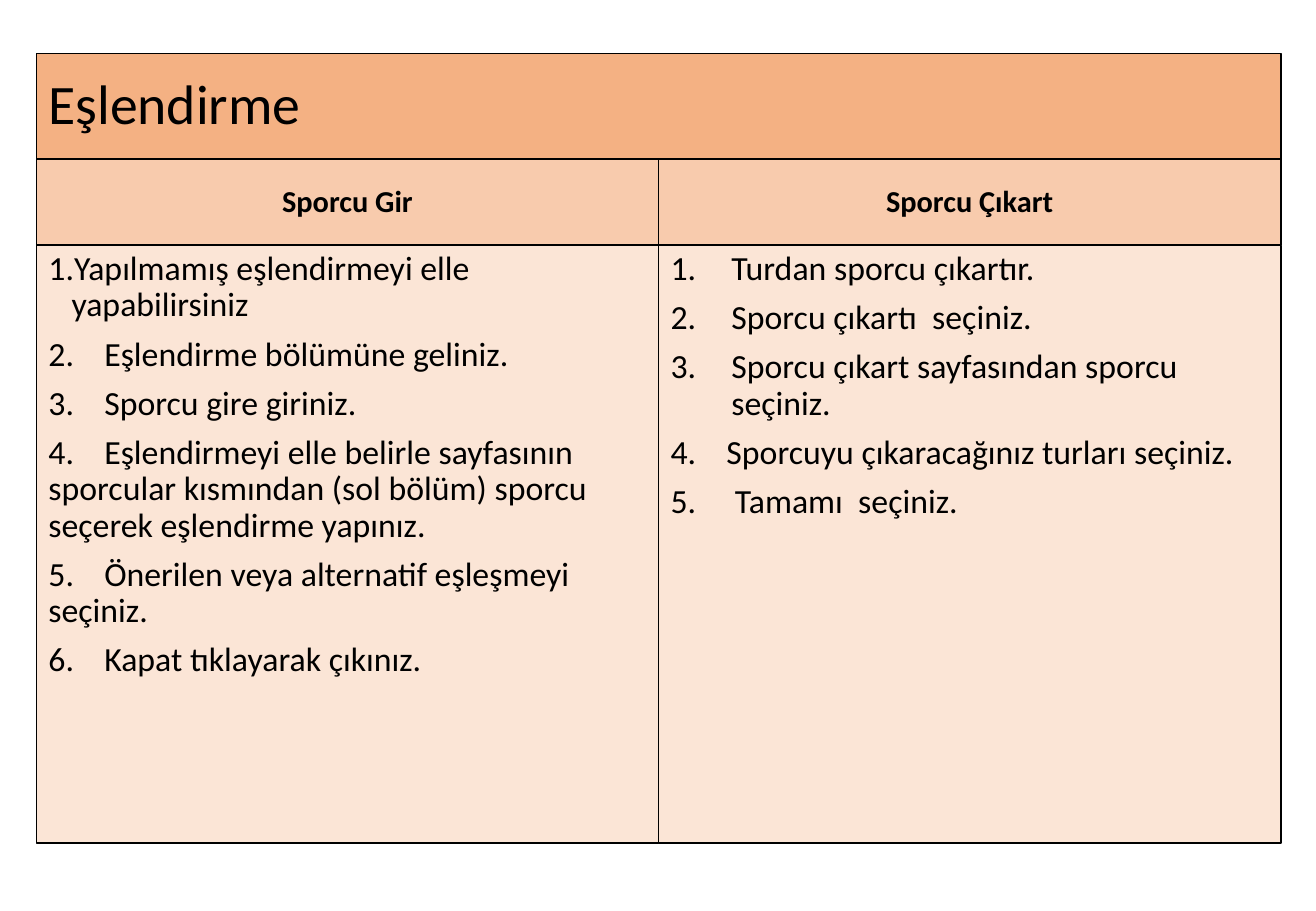
"""Build the pairing guide slide with its two lists of steps."""
import dataclasses

import lxml.etree
import pptx
import pptx.dml.color
import pptx.enum.shapes
import pptx.enum.text
import pptx.oxml.ns
import pptx.util

Inches = pptx.util.Inches
Pt = pptx.util.Pt
Align = pptx.enum.text.PP_ALIGN
Anchor = pptx.enum.text.MSO_ANCHOR


@dataclasses.dataclass(frozen=True)
class Theme:
    font: str = "Calibri"
    ink: str = "000000"
    title: str = "F4B183"
    head: str = "F8CBAD"
    body: str = "FBE5D6"
    large: int = 33
    medium: int = 18
    normal: int = 20
    gap: float = 7.5
    tab: float = 0.46


def color(code):
    return pptx.dml.color.RGBColor.from_string(code)


def apply(target, values):
    for name, value in values.items():
        setattr(target, name, value)


def add_tag(parent, name, **values):
    return lxml.etree.SubElement(parent, pptx.oxml.ns.qn(name), **values)


class Page:
    def __init__(self, slide, theme):
        self.slide = slide
        self.theme = theme

    def panel(self, left, top, width, height, fill, anchor):
        box = self.slide.shapes.add_shape(
            pptx.enum.shapes.MSO_SHAPE.RECTANGLE,
            Inches(left), Inches(top), Inches(width), Inches(height))
        box.shadow.inherit = False
        box.fill.solid()
        box.fill.fore_color.rgb = color(fill)
        box.line.color.rgb = color(self.theme.ink)
        box.line.width = Pt(1)
        apply(box.text_frame, {"word_wrap": True, "vertical_anchor": anchor})
        return box.text_frame

    def label(self, para, text, size, bold=False, align=Align.LEFT, gap=0):
        apply(para, {"alignment": align, "line_spacing": 0.9,
                     "space_before": Pt(gap)})
        run = para.add_run()
        run.text = text
        apply(run.font, {"name": self.theme.font, "size": Pt(size),
                         "bold": bold})
        run.font.color.rgb = color(self.theme.ink)

    def title(self, text, *area):
        frame = self.panel(*area, self.theme.title, Anchor.MIDDLE)
        self.label(frame.paragraphs[0], text, self.theme.large)

    def head(self, text, *area):
        frame = self.panel(*area, self.theme.head, Anchor.MIDDLE)
        self.label(frame.paragraphs[0], text, self.theme.medium, True,
                   Align.CENTER, self.theme.gap)

    def steps(self, items, *area):
        frame = self.panel(*area, self.theme.body, Anchor.TOP)
        for number, (text, hang) in enumerate(items, 1):
            para = frame.paragraphs[0] if number == 1 else frame.add_paragraph()
            line = text if hang else f"{number}.\t{text}"
            self.label(para, line, self.theme.normal, gap=self.theme.gap)
            props = para._p.get_or_add_pPr()
            if hang:
                props.set("marL", str(Inches(hang)))
                props.set("indent", str(-Inches(hang)))
                add_tag(props, "a:buAutoNum", type="arabicPeriod",
                        startAt=str(number))
            else:
                tabs = add_tag(props, "a:tabLst")
                add_tag(tabs, "a:tab", pos=str(Inches(self.theme.tab)),
                        algn="l")


COLUMNS = [
    ("Sporcu Gir", [
        ("Yapılmamış eşlendirmeyi elle yapabilirsiniz", 0.19),
        ("Eşlendirme bölümüne geliniz.", None),
        ("Sporcu gire giriniz.", None),
        ("Eşlendirmeyi elle belirle sayfasının sporcular kısmından "
         "(sol bölüm) sporcu seçerek eşlendirme yapınız.", None),
        ("Önerilen veya alternatif eşleşmeyi seçiniz.", None),
        ("Kapat tıklayarak çıkınız.", None),
    ]),
    ("Sporcu Çıkart", [
        ("Turdan sporcu çıkartır.", 0.5),
        ("Sporcu çıkartı  seçiniz.", 0.5),
        ("Sporcu çıkart sayfasından sporcu seçiniz.", 0.5),
        ("Sporcuyu çıkaracağınız turları seçiniz.", None),
        ("Tamamı  seçiniz.", 0.53),
    ]),
]


def main():
    deck = pptx.Presentation()
    apply(deck, {"slide_width": Inches(10.83), "slide_height": Inches(7.5)})
    page = Page(deck.slides.add_slide(deck.slide_layouts[6]), Theme())
    left, width = 0.3, 5.12
    page.title("Eşlendirme", left, 0.44, width * len(COLUMNS), 0.87)
    for index, (name, items) in enumerate(COLUMNS):
        start = left + index * width
        page.head(name, start, 1.31, width, 0.71)
        page.steps(items, start, 2.02, width, 4.92)
    deck.save("out.pptx")


if __name__ == "__main__":
    main()
